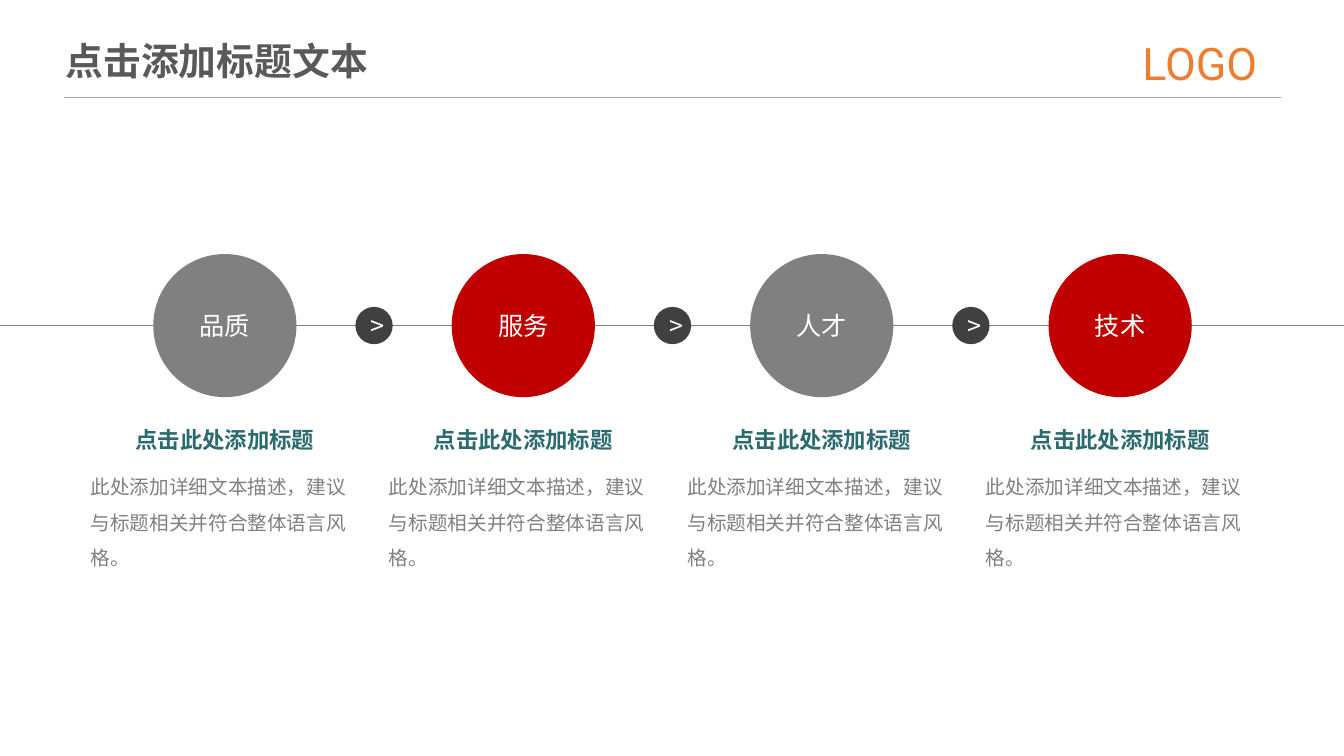
"""Builds a slide with four linked circles and a caption under each."""
from pptx import Presentation, util as u
from pptx.dml.color import RGBColor
from pptx.enum import shapes, text
from pptx.oxml.ns import qn

GREY = RGBColor(0x80, 0x80, 0x80)
RED = RGBColor(0xC0, 0x00, 0x00)
DARK = RGBColor(0x40, 0x40, 0x40)
INK = RGBColor(0x59, 0x59, 0x59)
TEAL = RGBColor(0x2B, 0x6B, 0x6F)
ORANGE = RGBColor(0xED, 0x7D, 0x31)
RULE = RGBColor(0xA6, 0xA6, 0xA6)
WHITE = RGBColor(0xFF, 0xFF, 0xFF)

SANS = "Noto Sans CJK SC"
WIDE, HIGH = 13.33, 7.5
FIRST, STEP = 2.23, 2.96
AXIS = 3.23
STAGES = [("品质", GREY), ("服务", RED), ("人才", GREY), ("技术", RED)]
HEAD = "点击此处添加标题"
BODY = "此处添加详细文本描述，建议与标题相关并符合整体语言风格。"


def write(shape, words, size, color, face=SANS, bold=False,
          align=text.PP_ALIGN.LEFT, space=None):
    """Put one styled paragraph into a shape."""
    para = shape.text_frame.paragraphs[0]
    para.text = words
    para.alignment = align
    if space:
        para.line_spacing = space
    font = para.font
    font.name, font.size, font.bold = face, u.Pt(size), bold
    font.color.rgb = color
    props = para._p.pPr.find(qn("a:defRPr"))
    east = props.makeelement(qn("a:ea"), {"typeface": face})
    props.find(qn("a:latin")).addnext(east)


def place(shape, left, top, width, height):
    """Set the position and size of a shape in inches."""
    shape.left, shape.top = u.Inches(left), u.Inches(top)
    shape.width, shape.height = u.Inches(width), u.Inches(height)


def label(shape, box, *words, **style):
    """Fill an unwrapped header box that grows with its text."""
    place(shape, *box)
    frame = shape.text_frame
    frame.word_wrap = False
    frame.auto_size = text.MSO_AUTO_SIZE.SHAPE_TO_FIT_TEXT
    frame.vertical_anchor = text.MSO_ANCHOR.TOP
    frame.margin_left = frame.margin_right = u.Inches(0.13)
    frame.margin_top = frame.margin_bottom = u.Inches(0.07)
    write(shape, *words, **style)


def line(slide, left, right, top, color, width):
    """Draw a level line without a shadow."""
    rule = slide.shapes.add_connector(
        shapes.MSO_CONNECTOR.STRAIGHT,
        u.Inches(left), u.Inches(top), u.Inches(right), u.Inches(top))
    rule.line.color.rgb = color
    rule.line.width = u.Pt(width)
    props = rule._element.spPr
    props.append(props.makeelement(qn("a:effectLst"), {}))


def disc(slide, mid, size, color, words):
    """Draw a filled circle on the axis with centred white text."""
    dot = slide.shapes.add_shape(shapes.MSO_SHAPE.OVAL, 0, 0, 0, 0)
    place(dot, mid - size / 2, AXIS - size / 2, size, size)
    dot.shadow.inherit = False
    dot.fill.solid()
    dot.fill.fore_color.rgb = color
    dot.line.fill.background()
    write(dot, words, 18, WHITE, align=text.PP_ALIGN.CENTER)


def block(group, mid, top, width, height, *words, **style):
    """Add a wrapped text box centred on a column."""
    box = group.shapes.add_textbox(0, 0, 0, 0)
    place(box, mid - width / 2, top, width, height)
    box.text_frame.word_wrap = True
    box.text_frame.auto_size = text.MSO_AUTO_SIZE.SHAPE_TO_FIT_TEXT
    write(box, *words, **style)


def note(slide, mid):
    """Add the grouped heading and description of a column."""
    group = slide.shapes.add_group_shape()
    block(group, mid, 4.18, 2.52, 0.37, HEAD, 16, TEAL,
          bold=True, align=text.PP_ALIGN.CENTER)
    block(group, mid, 4.55, 2.86, 1.12, BODY, 14, GREY, space=1.5)


def main():
    """Build and save the slide."""
    deck = Presentation()
    deck.slide_width, deck.slide_height = u.Inches(WIDE), u.Inches(HIGH)
    slide = deck.slides.add_slide(deck.slide_layouts[5])
    label(slide.shapes.title, (0.52, 0.3, 3.3, 0.59),
          "点击添加标题文本", 27, INK, bold=True)
    label(slide.shapes.add_textbox(0, 0, 0, 0), (11.2, 0.28, 1.66, 0.67),
          "LOGO", 32, ORANGE, face="Roboto")
    line(slide, 0.63, 12.71, 0.97, RULE, 1)
    line(slide, 0, WIDE, AXIS, GREY, 0.5)
    mids = [FIRST + STEP * i for i in range(len(STAGES))]
    for mid, (name, color) in zip(mids, STAGES):
        disc(slide, mid, 1.42, color, name)
    for mid in mids[:-1]:
        disc(slide, mid + STEP / 2, 0.37, DARK, ">")
    for mid in mids:
        note(slide, mid)
    deck.save("out.pptx")


if __name__ == "__main__":
    main()
